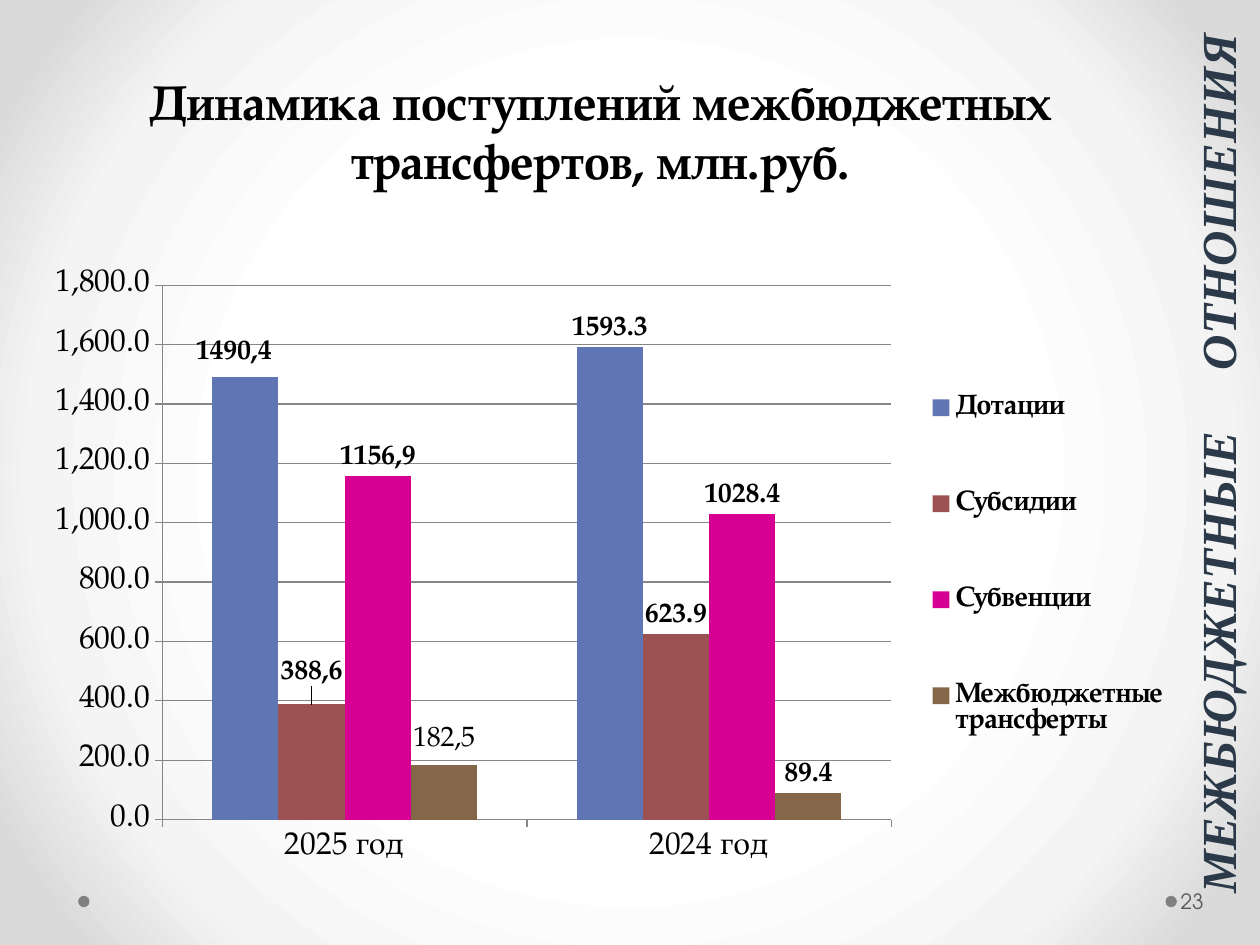
"""Build the slide on intergovernmental transfers with its clustered column chart."""
from lxml import etree
from pptx import Presentation
from pptx.chart.data import CategoryChartData
from pptx.dml.color import RGBColor
from pptx.enum.chart import XL_CHART_TYPE, XL_LABEL_POSITION, XL_LEGEND_POSITION, XL_TICK_MARK
from pptx.enum.shapes import MSO_SHAPE
from pptx.enum.text import MSO_ANCHOR, PP_ALIGN
from pptx.oxml import parse_xml
from pptx.oxml.ns import qn
from pptx.util import Inches, Pt

COLUMNS = XL_CHART_TYPE.COLUMN_CLUSTERED
OUTSIDE = XL_LABEL_POSITION.OUTSIDE_END
RIGHT = XL_LEGEND_POSITION.RIGHT
TICK_OUT = XL_TICK_MARK.OUTSIDE
TICK_NONE = XL_TICK_MARK.NONE
OVAL = MSO_SHAPE.OVAL
MIDDLE, BOTTOM = MSO_ANCHOR.MIDDLE, MSO_ANCHOR.BOTTOM
LEFT, CENTER = PP_ALIGN.LEFT, PP_ALIGN.CENTER

DRAWING = "http://schemas.openxmlformats.org/drawingml/2006/main"
BACKDROP = [(50, "FFFFFF"), (76, "F4F4F4"), (92, "DADADA")]
YEARS = ["2025 год", "2024 год"]
TRANSFERS = [
    ("Дотации", (1490.4, 1593.3), "6076B4", "1490,4", (-0.01, -0.01)),
    ("Субсидии", (388.6, 623.9), "9C5252", "388,6", (0, -0.02)),
    ("Субвенции", (1156.9, 1028.4), "D60093", "1156,9", None),
    ("Межбюджетные трансферты", (182.5, 89.4), "846648", "182,5", (0, -0.01)),
]


def rgb(code):
    """Turn a hex string into a colour."""
    return RGBColor.from_string(code)


def manual_layout(**parts):
    """Make a chart layout element from its named parts."""
    layout = etree.Element(qn("c:layout"))
    manual = etree.SubElement(layout, qn("c:manualLayout"))
    for name, value in parts.items():
        etree.SubElement(manual, qn(f"c:{name}"), val=str(value))
    return layout


def replace_layout(parent, layout, after):
    """Put a layout into a chart element, behind the named child or first."""
    for old in parent.findall(qn("c:layout")):
        parent.remove(old)
    parent.insert(0 if after is None else parent.index(parent.find(qn(after))) + 1, layout)


class SlideBuilder:
    """Holds the style and the current slide."""

    serif, sans, side = "TeX Gyre Pagella", "TeX Gyre Adventor", "Times New Roman"
    ink, grey, rule, navy, dot_grey = "000000", "595959", "868686", "2B3949", "808080"

    def __init__(self, page):
        self.page = page

    def style(self, font, name, size, color, bold=False, italic=False):
        """Set the look of a font."""
        font.name, font.size = name, Pt(size)
        font.bold, font.italic = bold, italic
        font.color.rgb = rgb(color)

    def backdrop(self, stops):
        """Fill the background with a round gradient."""
        fill = self.page.background.fill
        fill.gradient()
        stop_xml = "".join(
            f'<a:gs pos="{at * 1000}"><a:srgbClr val="{color}"/></a:gs>' for at, color in stops)
        gradient = parse_xml(
            f'<a:gradFill xmlns:a="{DRAWING}" rotWithShape="1"><a:gsLst>{stop_xml}</a:gsLst>'
            '<a:path path="circle"><a:fillToRect l="50000" t="50000" r="50000" b="50000"/>'
            '</a:path></a:gradFill>')
        old = self.page.background._cSld.find(".//" + qn("a:gradFill"))
        old.getparent().replace(old, gradient)

    def dot(self, left, top, size):
        """Draw a small round mark."""
        shape = self.page.shapes.add_shape(OVAL, Inches(left), Inches(top), Inches(size), Inches(size))
        shape.shadow.inherit = False
        shape.fill.solid()
        shape.fill.fore_color.rgb = rgb(self.dot_grey)
        shape.line.fill.background()

    def text(self, words, place, font, anchor, align, margins=(0.1, 0.05), turn=0, gap=0):
        """Add a text box whose words share one font, with wider spaces if asked."""
        box = self.page.shapes.add_textbox(*map(Inches, place))
        box.rotation = turn
        frame = box.text_frame
        frame.word_wrap, frame.vertical_anchor = True, anchor
        frame.margin_left = frame.margin_right = Inches(margins[0])
        frame.margin_top = frame.margin_bottom = Inches(margins[1])
        para = frame.paragraphs[0]
        para.alignment = align
        for part in words.partition(" ") if gap else [words]:
            span = para.add_run()
            span.text = part
            self.style(span.font, *font)
            if part == " ":
                span.font._element.set("spc", str(gap * 100))

    def axis(self, axis):
        """Style one chart axis."""
        axis.major_tick_mark, axis.minor_tick_mark = TICK_OUT, TICK_NONE
        axis.format.line.color.rgb = rgb(self.rule)
        self.style(axis.tick_labels.font, self.serif, 18, self.ink)

    def series(self, series, color, first_label, shift, bold):
        """Colour a series and label its columns, the first with its own text."""
        series.format.fill.solid()
        series.format.fill.fore_color.rgb = rgb(color)
        labels = series.data_labels
        labels.show_value, labels.position = True, OUTSIDE
        self.style(labels.font, self.serif, 16, self.ink, True)
        label = series.points[0].data_label
        label.text_frame.text = first_label
        self.style(label.text_frame.paragraphs[0].runs[0].font, self.serif, 16, self.ink, bold)
        label.position = OUTSIDE
        if shift:
            element = series._element.find(".//" + qn("c:dLbl"))
            replace_layout(element, manual_layout(x=shift[0], y=shift[1]), "c:idx")

    def chart(self, place, years, transfers):
        """Add the column chart with its legend."""
        data = CategoryChartData(number_format="0.0")
        data.categories = years
        for name, values, *_ in transfers:
            data.add_series(name, values)
        chart = self.page.shapes.add_chart(COLUMNS, *map(Inches, place), data).chart
        chart.has_title = False
        self.style(chart.font, self.serif, 18, self.ink)
        plot = chart.plots[0]
        plot.gap_width, plot.overlap, plot.vary_by_categories = 150, 0, False
        self.axis(chart.category_axis)
        values_axis = chart.value_axis
        self.axis(values_axis)
        values_axis.minimum_scale, values_axis.maximum_scale, values_axis.major_unit = 0, 1800, 200
        values_axis.tick_labels.number_format = "#,##0.0"
        values_axis.tick_labels.number_format_is_linked = False
        values_axis.major_gridlines.format.line.color.rgb = rgb(self.rule)
        for series, (_, _, color, label, shift) in zip(plot.series, transfers):
            self.series(series, color, label, shift, label != "182,5")
        chart.has_legend = True
        legend = chart.legend
        legend.position, legend.include_in_layout = RIGHT, False
        self.style(legend.font, self.serif, 16, self.ink, True)
        edges = {"xMode": "edge", "yMode": "edge"}
        replace_layout(legend._element, manual_layout(**edges, x=0.78, y=0.11, w=0.22, h=0.75),
                       "c:legendPos")
        area = chart._chartSpace.find(".//" + qn("c:plotArea"))
        replace_layout(area, manual_layout(layoutTarget="inner", **edges,
                                           x=0.127, y=0.048, w=0.628, h=0.835), None)


def main():
    """Build and save the deck."""
    deck = Presentation()
    deck.slide_width, deck.slide_height = Inches(10), Inches(7.5)
    builder = SlideBuilder(deck.slides.add_slide(deck.slide_layouts[6]))
    builder.backdrop(BACKDROP)
    for left in (9.25, 0.62):
        builder.dot(left, 7.11, 0.09)
    builder.text("Динамика поступлений межбюджетных трансфертов, млн.руб.", (0.43, 0.21, 8.67, 1.34),
                 (builder.serif, 28, builder.ink, True), BOTTOM, CENTER)
    builder.chart((0.12, 2.02, 9.21, 5.08), YEARS, TRANSFERS)
    builder.text("23", (9.34, 6.95, 0.61, 0.4), (builder.sans, 12, builder.grey),
                 MIDDLE, LEFT, (0.03, 0.05))
    builder.text("МЕЖБЮДЖЕТНЫЕ ОТНОШЕНИЯ", (5.81, 3.28, 7.37, 0.8),
                 (builder.side, 28, builder.navy, True, True), BOTTOM, CENTER, (0.05, 0), 270, 28)
    deck.save("out.pptx")


if __name__ == "__main__":
    main()
